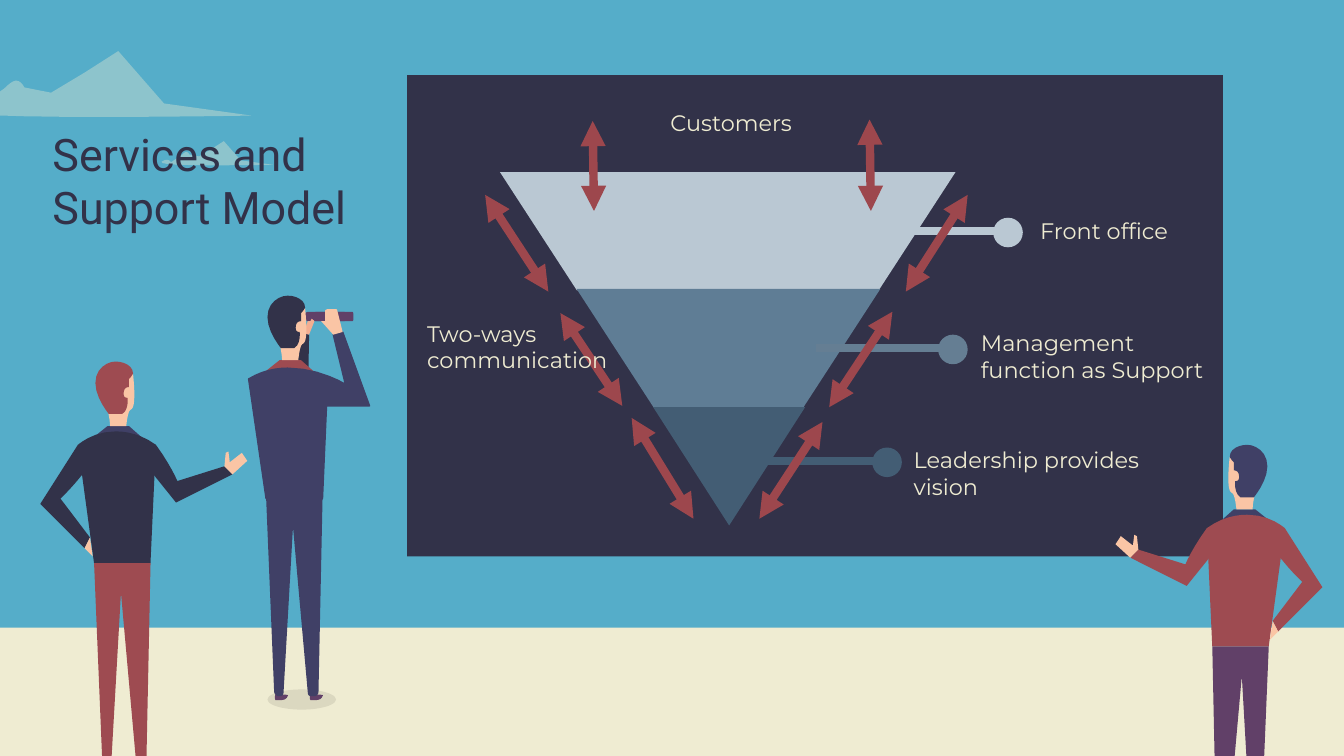
from lxml.etree import SubElement
from pptx import Presentation
from pptx.dml.color import RGBColor
from pptx.enum.shapes import MSO_CONNECTOR, MSO_SHAPE
from pptx.enum.text import MSO_ANCHOR, MSO_AUTO_SIZE, PP_ALIGN
from pptx.oxml.ns import qn
from pptx.util import Pt

PX = 9144
CURVE_STEPS = 6
SKY, SAND, NAVY, INDIGO = "55ADC9", "EFECD2", "323249", "404066"
RED, PLUM, SKIN, SKIN_SHADE = "9E4B51", "614068", "FAC5A5", "F3AE91"
ARROW, FOOT_SHADOW = "9D474D", "DBD8C0"

MOUNTAIN_SIZE = (231, 49)
MOUNTAIN = ("M 132 0 L 107 16 L 82 31 L 62 27 C 62 27 60 22 56 22 C 54 22 51 24 47 28 L 25 43 "
            "C 25 43 23 38 17 38 C 14 38 10 39 6 42 C 0 48 59 49 119 49 "
            "C 175 49 231 48 231 48 L 166 39")

PERSON_SIZE = (154, 298)
COLLAR = "M 50 48 L 40 56 L 53 63 L 75 56 L 66 48"
HEAD = ("M 69 9 L 47 23 C 47 23 52 41 52 48 L 64 48 C 64 48 65 37 67 36 "
        "C 69 35 70 33 70 25 C 70 17 69 9 69 9")
HAIR = ("M 56 0 C 50 0 41 5 41 16 C 41 27 51 39 51 39 L 61 39 C 66 36 65 27 65 27 "
        "C 64 27 62 27 62 24 C 62 20 64 19 66 19 L 66 13 C 68 11 69 9 69 9 C 69 3 62 0 56 0")
LEGS = ("M 40 150 L 46 295 C 46 296 48 298 49 298 L 50 298 C 52 298 53 297 53 295 L 60 172 "
        "L 71 295 C 71 297 72 298 73 298 L 76 298 C 78 298 79 296 79 295 L 82 150")

HIP_ARM = "M 28 62 L 0 106 L 33 139 L 37 131 L 15 102 C 15 102 25 93 36 78"
HIP_HAND = "M 37 131 L 33 139 L 39 145"
JACKET = "M 56 52 C 39 52 28 62 28 62 L 40 150 L 82 150 L 86 62 C 75 54 64 52 56 52"
OPEN_ARM = "M 86 62 L 68 64 L 101 105 L 143 84 L 137 78 L 102 89 C 102 89 97 77 86 62"
OPEN_HAND = "M 140 67 L 138 68 L 137 78 L 143 84 L 154 74 L 150 68 L 141 75"

SHOE = ("M 50 295 L 47 296 C 47 296 46 300 47 301 L 50 301 C 52 301 55 301 56 298 "
        "C 57 297 55 297 54 297 L 53 297 C 51 297 50 296 50 295")
TELESCOPE = ("M 71 12 L 69 13 L 68 14 L 68 17 L 69 18 L 71 19 L 98 19 "
             "C 99 19 99 18 99 16 C 99 14 99 12 98 12")
FAR_SLEEVE = "M 67 28 L 59 59 L 27 62 L 40 82 L 71 82 L 72 29"
FAR_HAND = "M 74 17 L 73 19 L 71 19 L 68 28 L 72 29 L 76 19 L 75 17"
COAT = ("M 97 27 L 90 29 L 99 66 C 99 66 80 54 56 54 C 47 54 37 56 27 62 "
        "L 40 151 L 82 151 L 85 82 L 117 82")
RAISED_HAND = ("M 91 10 L 86 10 C 85 10 84 11 84 11 L 84 19 L 81 19 L 90 29 L 97 27 L 93 11 "
               "C 93 10 92 10 91 10")

LEVEL_COLOURS = ["BAC8D3", "5F7D95", "435D74"]
CALLOUTS = [
    ("Front office", "BAC8D3", 365, (436, 106), (461, 101, 189, 30)),
    ("Management function as Support", "657E93", 304, (395, 193), (417, 184, 189, 50)),
    ("Leadership provides vision", "435D74", 243, (346, 277), (367, 271, 189, 71)),
]
ARROWS = [
    (114, 177, 160, 246), (167, 255, 213, 330), (58, 89, 105, 161), (361, 176, 314, 247),
    (309, 258, 262, 330), (417, 89, 371, 161), (138, 34, 139, 101), (344, 33, 345, 101),
]


def colour(hex_string):
    return RGBColor.from_string(hex_string)


def apply_format(target, values):
    for name, value in values.items():
        setattr(target, name, value)


def to_emu(*lengths):
    return [round(length * PX) for length in lengths]


def paint(shape, fill, border=None, opacity=None):
    shape.shadow.inherit = False
    shape.fill.solid()
    shape.fill.fore_color.rgb = colour(fill)
    if border:
        shape.line.color.rgb = colour(border)
        shape.line.width = Pt(0.75)
    else:
        shape.line.fill.background()
    if opacity:
        for solid in shape.element.spPr.iter(qn("a:srgbClr")):
            SubElement(solid, qn("a:alpha"), val=str(opacity * 1000))


def add_preset(shapes, kind, box, fill):
    shape = shapes.add_shape(kind, *to_emu(*box))
    paint(shape, fill)
    return shape


def trace(outline):
    tokens = iter(outline.split())
    points = []
    for command in tokens:
        count = 3 if command == "C" else 1
        corners = [(int(next(tokens)), int(next(tokens))) for _ in range(count)]
        if command != "C":
            points += corners
            continue
        start = points[-1]
        for step in range(1, CURVE_STEPS + 1):
            t = step / CURVE_STEPS
            weights = ((1 - t) ** 3, 3 * t * (1 - t) ** 2, 3 * t * t * (1 - t), t ** 3)
            control = zip(*[start, *corners])
            points.append(tuple(sum(w * v for w, v in zip(weights, axis)) for axis in control))
    return points


def add_outline(shapes, outline, box, size, fill, mirrored=False, shift=0, **style):
    left, top, width, height = box
    points = []
    for x, y in trace(outline):
        x = size[0] - x if mirrored else x + shift
        points.append(to_emu(left + x * width / size[0], top + y * height / size[1]))
    builder = shapes.build_freeform(*points[0], scale=1.0)
    builder.add_line_segments(points[1:], close=True)
    paint(builder.convert_to_shape(), fill, **style)


def add_line(shapes, ends, line_colour, arrowheads=False):
    connector = shapes.add_connector(MSO_CONNECTOR.STRAIGHT, *to_emu(*ends))
    connector.line.color.rgb = colour(line_colour)
    connector.line.width = Pt(4.5)
    properties = connector.element.spPr
    if arrowheads:
        for end in ("a:headEnd", "a:tailEnd"):
            SubElement(properties.find(qn("a:ln")), qn(end), type="triangle")
    SubElement(properties, qn("a:effectLst"))


def write(shape, lines, font_values, font_colour, frame_values):
    frame = shape.text_frame
    frame.text = "\n".join(lines)
    apply_format(frame, {"word_wrap": True, **frame_values})
    for paragraph in frame.paragraphs:
        paragraph.alignment = PP_ALIGN.LEFT
        for run in paragraph.runs:
            apply_format(run.font, font_values)
            run.font.color.rgb = colour(font_colour)


def add_label(shapes, lines, box):
    write(shapes.add_textbox(*to_emu(*box)), lines, {"name": "Montserrat", "size": Pt(12)},
          SAND, {"auto_size": MSO_AUTO_SIZE.SHAPE_TO_FIT_TEXT})


def draw_scenery(slide):
    slide.background.fill.solid()
    slide.background.fill.fore_color.rgb = colour(SKY)
    add_preset(slide.shapes, MSO_SHAPE.RECTANGLE, (-6, 467, 1015, 103), SAND)
    for box in [(-44, 38, 231, 49), (118, 105, 85, 18)]:
        add_outline(slide.shapes, MOUNTAIN, box, MOUNTAIN_SIZE, SAND, opacity=37)


def draw_lookout(slide, box):
    shapes = slide.shapes.add_group_shape().shapes
    left, top = box[:2]
    add_preset(shapes, MSO_SHAPE.OVAL, (left + 41, top + 293, 51, 15), FOOT_SHADOW)
    parts = [
        (SHOE, PLUM, {}), (SHOE, PLUM, {"shift": 26}), (TELESCOPE, PLUM, {}),
        (FAR_SLEEVE, NAVY, {}), (FAR_HAND, SKIN_SHADE, {}), (COLLAR, RED, {}),
        (COAT, INDIGO, {"border": INDIGO}), (HEAD, SKIN, {}), (HAIR, NAVY, {}),
        (TELESCOPE, PLUM, {"shift": 6}), (RAISED_HAND, SKIN, {}), (LEGS, INDIGO, {}),
    ]
    for part, fill, options in parts:
        add_outline(shapes, part, box, PERSON_SIZE, fill, **options)


def draw_presenter(slide, box, hair, jacket, trousers, mirrored=False):
    shapes = slide.shapes.add_group_shape().shapes
    parts = [
        (HIP_ARM, jacket), (COLLAR, INDIGO), (HEAD, SKIN), (HAIR, hair), (JACKET, jacket),
        (HIP_HAND, SKIN), (OPEN_ARM, jacket), (OPEN_HAND, SKIN), (LEGS, trousers),
    ]
    for part, fill in parts:
        add_outline(shapes, part, box, PERSON_SIZE, fill, mirrored=mirrored)


def draw_board(slide, box):
    shapes = slide.shapes
    left, top = box[:2]
    add_preset(shapes, MSO_SHAPE.RECTANGLE, box, NAVY)
    for index, fill in enumerate(LEVEL_COLOURS):
        level_box = (left + 69 + 57 * index, top + 72 + 175 * index // 2, 339 - 113 * index, 88)
        level = add_preset(shapes, MSO_SHAPE.TRAPEZOID, level_box, fill)
        level.adjustments[0] = 0.65
        level.rotation = 180
    for label, fill, line_start, (dot_x, dot_y), (x, y, width, height) in CALLOUTS:
        line_y = top + dot_y + 10
        add_line(shapes, (left + line_start, line_y, left + dot_x + 8, line_y), fill)
        add_preset(shapes, MSO_SHAPE.OVAL, (left + dot_x, top + dot_y, 22, 22), fill)
        add_label(shapes, [label], (left + x, top + y, width, height))
    for x1, y1, x2, y2 in ARROWS:
        add_line(shapes, (left + x1, top + y1, left + x2, top + y2), ARROW, arrowheads=True)
    add_label(shapes, ["Customers"], (left + 186, top + 20, 189, 30))
    add_label(shapes, ["Two-ways", "communication"], (left + 5, top + 177, 154, 50))


def place_title(slide, box):
    title = slide.shapes.title
    apply_format(title, dict(zip(("left", "top", "width", "height"), to_emu(*box))))
    margins = {f"margin_{side}": 10 * PX for side in ("left", "top", "right", "bottom")}
    write(title, ["Services and Support Model"], {"name": "Roboto", "size": Pt(24)}, NAVY,
          {"vertical_anchor": MSO_ANCHOR.BOTTOM, "auto_size": MSO_AUTO_SIZE.NONE, **margins})
    title.element.getparent().append(title.element)


def main():
    presentation = Presentation()
    presentation.slide_width = 1000 * PX
    presentation.slide_height = 1000 * PX * 9 // 16
    slide = presentation.slides.add_slide(presentation.slide_layouts[5])
    draw_scenery(slide)
    draw_lookout(slide, (158, 220, *PERSON_SIZE))
    draw_presenter(slide, (30, 269, *PERSON_SIZE), RED, NAVY, RED)
    draw_board(slide, (303, 56, 607, 358))
    draw_presenter(slide, (830, 331, *PERSON_SIZE), INDIGO, RED, PLUM, mirrored=True)
    place_title(slide, (29, 88, 281, 96))
    presentation.save("out.pptx")


if __name__ == "__main__":
    main()
